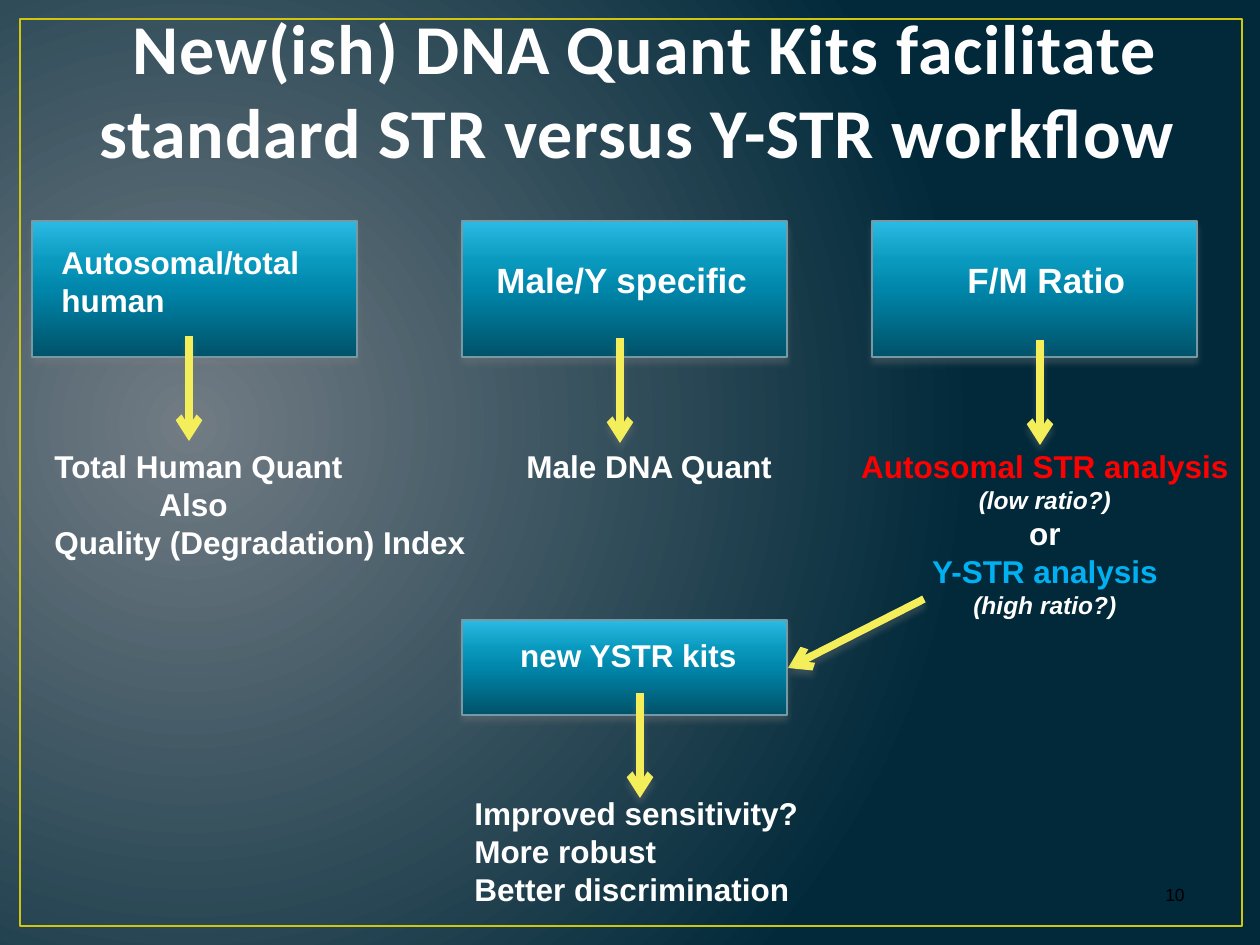
from dataclasses import dataclass
from pptx import Presentation
from pptx.dml.color import RGBColor as Rgb
from pptx.enum.shapes import MSO_CONNECTOR as Link, MSO_SHAPE as Shape
from pptx.enum.text import MSO_ANCHOR as Anchor, PP_ALIGN as Align
from pptx.oxml import parse_xml as to_xml
from pptx.oxml.ns import nsdecls, qn
from pptx.util import Pt


@dataclass(frozen=True)
class Theme:
    head: str = "Calibri"
    body: str = "Arial"
    white: str = "FFFFFF"
    title: str = "FEFEFE"
    black: str = "000000"
    red: str = "FF0000"
    blue: str = "00B0F0"
    frame: str = "CFC60D"
    edge: str = "759AA5"
    arrow: str = "F5EE5B"
    shade: str = "808080"
    back: tuple = ((0, "717C84"), (100, "01293A"))
    panel: tuple = ((0, "2ABAE3"), (30, "0A99BE"), (50, "0086AA"), (100, "005269"))
    huge: int = 40
    large: int = 20
    base: int = 18
    small: int = 14
    tiny: int = 10


T = Theme()


def px(n):
    return round(n * 914400 / 126)


def node(tag, inner="", attrs=""):
    return to_xml(f"<a:{tag} {nsdecls('a')} {attrs}>{inner}</a:{tag}>")


def blend(owner, stops, way):
    marks = "".join(
        f'<a:gs pos="{at * 1000}"><a:srgbClr val="{tone}"/></a:gs>' for at, tone in stops
    )
    old = owner.find(qn("a:solidFill"))
    owner.replace(old, node("gradFill", f"<a:gsLst>{marks}</a:gsLst>{way}", 'rotWithShape="1"'))


def cast(shape):
    tone = f'<a:srgbClr val="{T.shade}"><a:alpha val="35000"/></a:srgbClr>'
    glow = (f'<a:outerShdw blurRad="{Pt(4)}" dist="{Pt(3)}" dir="5400000" '
            f'rotWithShape="0">{tone}</a:outerShdw>')
    shape._element.spPr.append(node("effectLst", glow))


def style(run, size, color, font=T.body, bold=True, slant=False):
    face = run.font
    face.name, face.size, face.bold, face.italic = font, Pt(size), bold, slant
    face.color.rgb = Rgb.from_string(color)


def write(slide, box, rows, align=Align.LEFT, **look):
    frame = slide.shapes.add_textbox(*map(px, box)).text_frame
    frame.word_wrap = True
    frame.text = "\n".join(row[0] for row in rows)
    for para, (_, size, color, *slant) in zip(frame.paragraphs, rows):
        para.alignment = align
        style(para.runs[0], size, color, slant=bool(slant), **look)
    return frame


def outline(shape, color, width):
    shape.line.color.rgb = Rgb.from_string(color)
    shape.line.width = Pt(width)


def panel(slide, box):
    shape = slide.shapes.add_shape(Shape.RECTANGLE, *map(px, box))
    shape.fill.solid()
    blend(shape._element.spPr, T.panel, '<a:lin ang="5400000" scaled="0"/>')
    outline(shape, T.edge, 0.75)
    cast(shape)


def arrow(slide, *ends):
    line = slide.shapes.add_connector(Link.STRAIGHT, *map(px, ends))
    outline(line, T.arrow, 4.33)
    line.line._get_or_add_ln().append(node("tailEnd", attrs='type="arrow"'))
    cast(line)


def branch(slide, box, label, stem, notes):
    x, y, w, h = box
    panel(slide, box)
    (dx, dy, span), row, align = label
    write(slide, (x + dx, y + dy, span, 90), [row], align)
    dx, dy = stem
    arrow(slide, x + dx, y + dy, x + dx, y + dy + 105)
    (dx, dy, span), rows, align = notes
    return write(slide, (x + dx, y + dy, span, 127), rows, align)


def backdrop(slide, box):
    slide.background.fill.solid()
    way = '<a:path path="circle"><a:fillToRect l="15000" t="50000" r="85000" b="60000"/></a:path>'
    blend(slide._element.cSld.find(qn("p:bg")).find(qn("p:bgPr")), T.back, way)
    frame = slide.shapes.add_shape(Shape.RECTANGLE, *map(px, box))
    frame.fill.background()
    frame.shadow.inherit = False
    outline(frame, T.frame, 1.5)


def title(slide, box):
    words = "New(ish) DNA Quant Kits facilitate standard STR versus Y-STR workflow "
    frame = write(slide, box, [(words, T.huge, T.title)], Align.CENTER, font=T.head)
    frame.vertical_anchor = Anchor.BOTTOM
    frame.paragraphs[0].runs[0].font._element.set("spc", "50")


def tests(slide, box):
    left, top, w, h = box
    near, mid = Align.LEFT, Align.CENTER

    def plain(*lines):
        return [(line, T.base, T.white) for line in lines]

    human = branch(
        slide, (left, top, w, h),
        ((17, 16, 309), ("Autosomal/total human", T.base, T.white), near),
        (157, 115),
        ((10, 220, 437), plain("Total Human Quant", "Also", "Quality (Degradation) Index"), near))
    human.paragraphs[1]._p.get_or_add_pPr().set("marL", str(Pt(60)))
    branch(
        slide, (left + 430, top, w, h),
        ((22, 31, 299), ("Male/Y specific", T.large, T.white), near),
        (158, 117),
        ((52, 220, 325), plain("Male DNA Quant"), near))
    ratio = [
        ("Autosomal STR analysis", T.base, T.red),
        ("(low ratio?)", T.small, T.white, True),
        ("or", T.base, T.white),
        ("Y-STR analysis", T.base, T.blue),
        ("(high ratio?)", T.small, T.white, True),
    ]
    branch(
        slide, (left + 840, top, w, h),
        ((83, 31, 284), ("F/M Ratio", T.large, T.white), near),
        (168, 119),
        ((-32, 220, 410), ratio, mid))
    arrow(slide, left + 892, top + 378, left + 756, top + 447)
    branch(
        slide, (left + 430, top + 399, w, 95),
        ((4, 10, w), ("new YSTR kits", T.base, T.white), mid),
        (178, 73),
        ((0, 168, 441), plain("Improved sensitivity?", "More robust", "Better discrimination"), near))


def number(slide, box):
    frame = write(slide, box, [("10", T.tiny, T.black)], Align.RIGHT, bold=False)
    frame.vertical_anchor = Anchor.MIDDLE


def main():
    deck = Presentation()
    deck.slide_width, deck.slide_height = px(1260), px(945)
    slide = deck.slides.add_slide(deck.slide_layouts[6])
    backdrop(slide, (20, 19, 1222, 907))
    title(slide, (32, 21, 1228, 158))
    tests(slide, (32, 221, 325, 136))
    number(slide, (1100, 876, 97, 38))
    deck.save("out.pptx")


if __name__ == "__main__":
    main()
